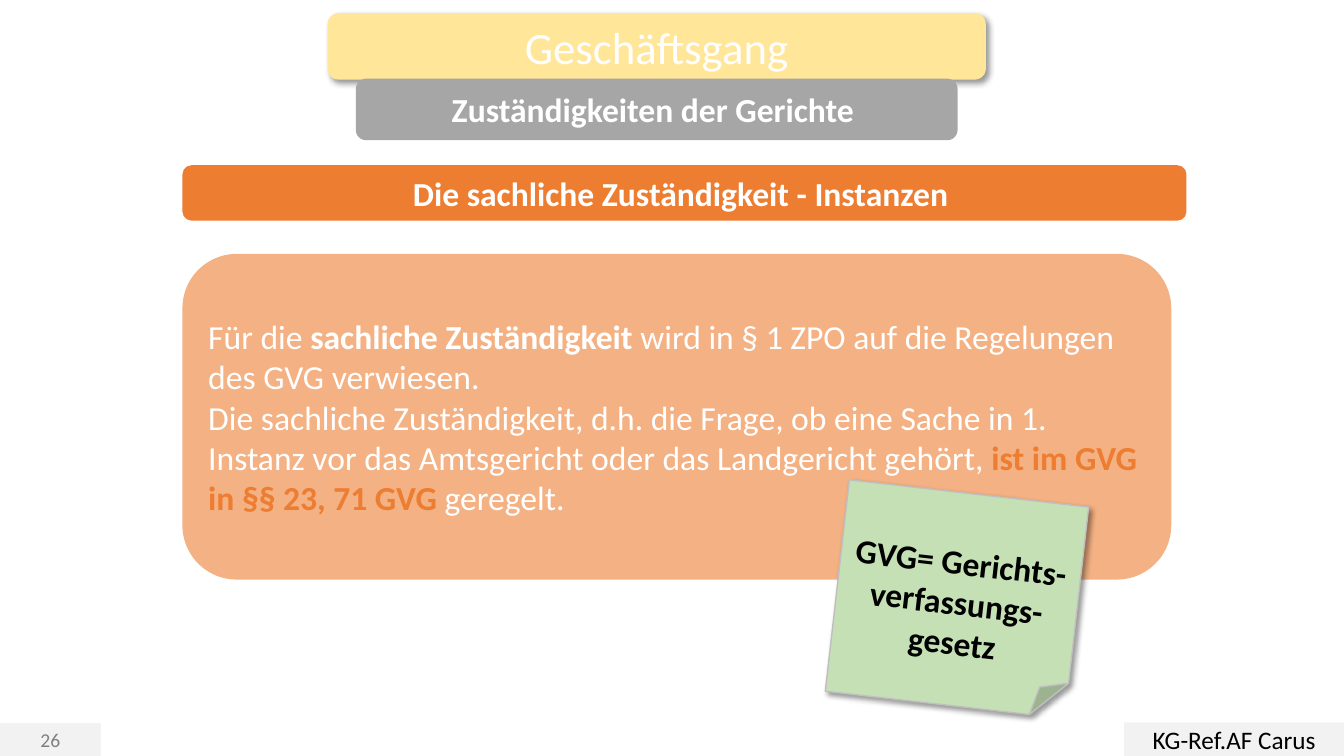
from dataclasses import dataclass
from typing import Optional

from lxml import etree
from pptx import Presentation
from pptx.dml.color import RGBColor
from pptx.enum import shapes, text
from pptx.oxml import ns
from pptx.util import Pt

WHITE = RGBColor(0xFF, 0xFF, 0xFF)
BLACK = RGBColor(0x00, 0x00, 0x00)
GRAY_TEXT = RGBColor(0x80, 0x80, 0x80)
FOOTER_GRAY = RGBColor(0xF2, 0xF2, 0xF2)
BANNER_GRAY = RGBColor(0xA6, 0xA6, 0xA6)
NOTE_LINE = RGBColor(0xBF, 0xBF, 0xBF)
YELLOW = RGBColor(0xFF, 0xE6, 0x99)
ORANGE = RGBColor(0xED, 0x7D, 0x31)
LIGHT_ORANGE = RGBColor(0xF4, 0xB1, 0x83)
GREEN = RGBColor(0xC5, 0xE0, 0xB4)

RECT = shapes.MSO_SHAPE.RECTANGLE
ROUNDED = shapes.MSO_SHAPE.ROUNDED_RECTANGLE
NOTE = shapes.MSO_SHAPE.FOLDED_CORNER
CENTER = text.PP_ALIGN.CENTER
LEFT = text.PP_ALIGN.LEFT


@dataclass
class Run:
    words: str
    size: float = 24
    color: RGBColor = WHITE
    bold: bool = False


@dataclass
class Panel:
    left: float
    top: float
    width: float
    height: float
    fill: RGBColor
    paragraphs: list[list[Run]]
    form: int = ROUNDED
    line: Optional[RGBColor] = None
    align: int = CENTER
    rotation: float = 0
    shadow: bool = False
    top_inset: float = 3.6


def add_run(paragraph, words: str, *, size: float, color: RGBColor, bold: bool) -> None:
    run = paragraph.add_run()
    run.text = words
    run.font.name = "Calibri"
    run.font.size = Pt(size)
    run.font.bold = bold
    run.font.color.rgb = color


def cast_shadow(shape) -> None:
    """Give the shape a soft black shadow towards the lower right."""
    effects = shape._element.spPr.find(ns.qn("a:effectLst"))
    outer = etree.SubElement(
        effects, ns.qn("a:outerShdw"), blurRad=str(Pt(4)), dist=str(Pt(3)),
        dir=str(45 * 60000), algn="tl", rotWithShape="0")
    black = etree.SubElement(outer, ns.qn("a:srgbClr"), val=str(BLACK))
    etree.SubElement(black, ns.qn("a:alpha"), val="40000")


def draw_panel(slide, panel: Panel) -> None:
    shape = slide.shapes.add_shape(
        panel.form, Pt(panel.left), Pt(panel.top), Pt(panel.width), Pt(panel.height))
    shape.rotation = panel.rotation
    shape.fill.solid()
    shape.fill.fore_color.rgb = panel.fill
    if panel.line is None:
        shape.line.fill.background()
    else:
        shape.line.color.rgb = panel.line
        shape.line.width = Pt(1)
    shape.shadow.inherit = False
    if panel.shadow:
        cast_shadow(shape)

    frame = shape.text_frame
    frame.word_wrap = True
    frame.vertical_anchor = text.MSO_ANCHOR.MIDDLE
    frame.margin_top = Pt(panel.top_inset)
    for index, runs in enumerate(panel.paragraphs):
        paragraph = frame.add_paragraph() if index else frame.paragraphs[0]
        paragraph.alignment = panel.align
        for run in runs:
            add_run(paragraph, run.words, size=run.size, color=run.color, bold=run.bold)


EXPLANATION = [
    [Run("Für die "),
     Run("sachliche Zuständigkeit ", bold=True),
     Run("wird in § 1 ZPO auf die Regelungen des GVG verwiesen.")],
    [Run("Die sachliche Zuständigkeit, d.h. die Frage, ob eine Sache in 1. Instanz "
         "vor das Amtsgericht oder das Landgericht gehört, "),
     Run("ist im GVG in §§ 23, 71 GVG", color=ORANGE, bold=True),
     Run(" geregelt.")],
]

PANELS = [
    Panel(0, 517, 72, 23, FOOTER_GRAY, [[Run("26", 14, GRAY_TEXT)]],
          form=RECT, line=FOOTER_GRAY),
    Panel(803, 516, 157, 24, FOOTER_GRAY, [[Run("KG-Ref.AF Carus", 18, BLACK)]],
          form=RECT),
    Panel(130.3, 118, 717.2, 39.6, ORANGE,
          [[Run("Die sachliche Zuständigkeit - Instanzen ", bold=True)]]),
    Panel(234, 9.4, 470.2, 47.5, YELLOW, [[Run("Geschäftsgang", 32)]], shadow=True),
    Panel(254.2, 56.2, 429.8, 44, BANNER_GRAY,
          [[Run("Zuständigkeiten der Gerichte ", bold=True)]]),
    Panel(130.3, 181.4, 706.3, 232.6, LIGHT_ORANGE, EXPLANATION, align=LEFT),
    Panel(597.6, 352, 172, 152, GREEN,
          [[Run("GVG= Gerichts-verfassungs-gesetz", color=BLACK, bold=True)]],
          form=NOTE, line=NOTE_LINE, rotation=6.5, shadow=True, top_inset=32.4),
]


def main() -> None:
    deck = Presentation()
    deck.slide_width, deck.slide_height = Pt(960), Pt(540)
    slide = deck.slides.add_slide(deck.slide_layouts[6])
    for panel in PANELS:
        draw_panel(slide, panel)
    deck.save("out.pptx")


if __name__ == "__main__":
    main()
